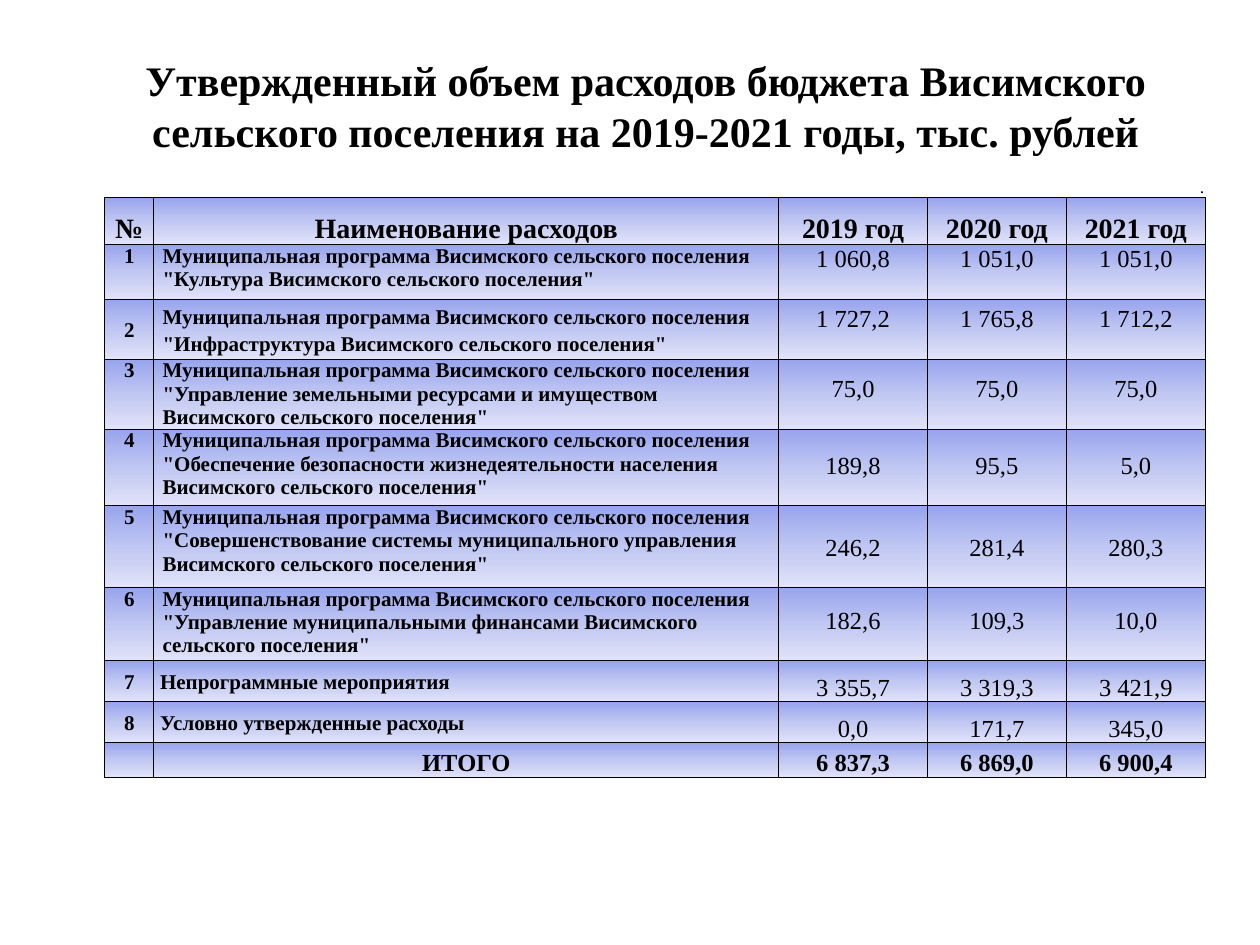
from dataclasses import dataclass

import lxml.etree
import pptx
import pptx.dml.color
import pptx.enum.text
import pptx.oxml.ns
import pptx.util

Pt = pptx.util.Pt
Align = pptx.enum.text.PP_ALIGN
Anchor = pptx.enum.text.MSO_ANCHOR


@dataclass(frozen=True)
class Theme:
    font: str = "Times New Roman"
    ink: str = "000000"
    gradient: tuple = ((0, "98A4ED"), (50, "C0C7F2"), (100, "E1E3F8"))
    border: float = 0.5
    title: float = 24
    header: float = 16
    amount: float = 14
    label: float = 12
    unit: float = 10


@dataclass(frozen=True)
class Expense:
    name: str
    amounts: tuple
    height: float
    anchor: Anchor = Anchor.TOP
    spacing: float = 1.0
    side: float = 5
    lift: float = 15  # space under the amounts


THEME = Theme()
COLUMN_WIDTHS = (28.1, 357.1, 85, 79.4, 79.4)
TIGHT = (0.7, 0.7, 0.7, 0)
PROGRAMME = "Муниципальная программа Висимского сельского поселения "
HEADERS = ("№", "Наименование расходов", "2019 год", "2020 год", "2021 год")
TOTALS = ("", "ИТОГО", "6 837,3", "6 869,0", "6 900,4")
EXPENSES = (
    Expense(PROGRAMME + '"Культура Висимского сельского поселения"',
            ("1 060,8", "1 051,0", "1 051,0"), 31.4),
    Expense(PROGRAMME + '"Инфраструктура Висимского сельского поселения"',
            ("1 727,2", "1 765,8", "1 712,2"), 34.2, Anchor.MIDDLE, 1.15),
    Expense(PROGRAMME + '"Управление земельными ресурсами и имуществом '
            'Висимского сельского поселения"',
            ("75,0", "75,0", "75,0"), 40),
    Expense(PROGRAMME + '"Обеспечение безопасности жизнедеятельности населения '
            'Висимского сельского поселения"',
            ("189,8", "95,5", "5,0"), 43.9),
    Expense(PROGRAMME + '"Совершенствование системы муниципального управления '
            'Висимского сельского поселения"',
            ("246,2", "281,4", "280,3"), 46.7),
    Expense(PROGRAMME + '"Управление муниципальными финансами Висимского '
            'сельского поселения"',
            ("182,6", "109,3", "10,0"), 41.8),
    Expense("Непрограммные мероприятия", ("3 355,7", "3 319,3", "3 421,9"),
            23.4, Anchor.MIDDLE, 1.15, 3.6, 0),
    Expense("Условно утвержденные расходы", ("0,0", "171,7", "345,0"),
            23.4, Anchor.MIDDLE, 1.15, 3.6, 0),
)


def write(frame, text: str, *, size: float, bold: bool = False,
          align: Align = Align.CENTER, spacing: float = 1.0) -> None:
    """Put one formatted paragraph in a text frame."""
    paragraph = frame.paragraphs[0]
    paragraph.alignment = align
    paragraph.line_spacing = spacing
    if not text:  # keeps an empty cell from stretching its row
        end = lxml.etree.SubElement(paragraph._p, pptx.oxml.ns.qn("a:endParaRPr"))
        end.set("sz", str(int(size * 100)))
        return
    run = paragraph.add_run()
    run.text = text
    run.font.name = THEME.font
    run.font.size = Pt(size)
    run.font.bold = bold
    run.font.color.rgb = pptx.dml.color.RGBColor.from_string(THEME.ink)


def add_part(parent, tag: str, **attributes):
    part = lxml.etree.SubElement(parent, pptx.oxml.ns.qn(tag))
    for key, value in attributes.items():
        part.set(key, str(value))
    return part


def draw_borders(cell, sides: str) -> None:
    """Line the named sides (L, R, T, B) and clear the others."""
    properties = cell._tc.get_or_add_tcPr()
    for side in "LRTB":
        line = add_part(properties, "a:ln" + side, w=int(Pt(THEME.border)))
        if side in sides:
            add_part(add_part(line, "a:solidFill"), "a:srgbClr", val=THEME.ink)
        else:
            add_part(line, "a:noFill")


def fill_gradient(cell) -> None:
    gradient = add_part(cell._tc.get_or_add_tcPr(), "a:gradFill", rotWithShape=1)
    stops = add_part(gradient, "a:gsLst")
    for position, color in THEME.gradient:
        stop = add_part(stops, "a:gs", pos=position * 1000)
        add_part(stop, "a:srgbClr", val=color)
    add_part(gradient, "a:lin", ang=90 * 60000, scaled=0)


def draw_cell(cell, text: str, *, insets: tuple = TIGHT,
              anchor: Anchor = Anchor.BOTTOM, framed: bool = True, **text_format) -> None:
    left, top, right, bottom = insets
    cell.margin_left, cell.margin_top = Pt(left), Pt(top)
    cell.margin_right, cell.margin_bottom = Pt(right), Pt(bottom)
    cell.vertical_anchor = anchor
    draw_borders(cell, "LRTB" if framed else "B")
    if framed:
        fill_gradient(cell)
    else:
        cell.fill.background()
    write(cell.text_frame, text, **text_format)


def draw_expense(table, number: int, expense: Expense) -> None:
    row = number + 1
    label_format = dict(insets=(expense.side, 0, expense.side, 0), anchor=expense.anchor,
                        size=THEME.label, bold=True, spacing=expense.spacing)
    draw_cell(table.cell(row, 0), str(number), **label_format)
    draw_cell(table.cell(row, 1), expense.name, align=Align.LEFT, **label_format)
    for column, amount in enumerate(expense.amounts, start=2):
        draw_cell(table.cell(row, column), amount, size=THEME.amount,
                  insets=(0.7, 0.7, 0.7, expense.lift))


def main() -> None:
    deck = pptx.Presentation()
    deck.slide_width, deck.slide_height = Pt(720), Pt(540)
    slide = deck.slides.add_slide(deck.slide_layouts[5])

    # Title
    title = slide.shapes.title
    title.left, title.top, title.width, title.height = Pt(42.5), Pt(31.7), Pt(653), Pt(56.9)
    title.text_frame.vertical_anchor = Anchor.MIDDLE
    title.text_frame.word_wrap = True
    write(title.text_frame, "Утвержденный объем расходов бюджета Висимского "
          "сельского поселения на 2019-2021 годы, тыс. рублей",
          size=THEME.title, bold=True)

    # Table grid
    heights = (12.8, 26.8, *(expense.height for expense in EXPENSES), 19.8)
    table = slide.shapes.add_table(len(heights), len(COLUMN_WIDTHS), Pt(59.8), Pt(100),
                                   Pt(sum(COLUMN_WIDTHS)), Pt(sum(heights))).table
    table.first_row = table.horz_banding = False
    for column, width in zip(table.columns, COLUMN_WIDTHS):
        column.width = Pt(width)
    for row, height in zip(table.rows, heights):
        row.height = Pt(height)

    # Unit line, header and totals
    last = len(heights) - 1
    for column, (header, total) in enumerate(zip(HEADERS, TOTALS)):
        draw_cell(table.cell(0, column), "." if column == 4 else "", framed=False,
                  size=THEME.unit, align=Align.RIGHT)
        draw_cell(table.cell(1, column), header, size=THEME.header, bold=True)
        draw_cell(table.cell(last, column), total, size=THEME.amount, bold=True)

    # Expense rows
    for number, expense in enumerate(EXPENSES, start=1):
        draw_expense(table, number, expense)

    deck.save("out.pptx")


if __name__ == "__main__":
    main()
